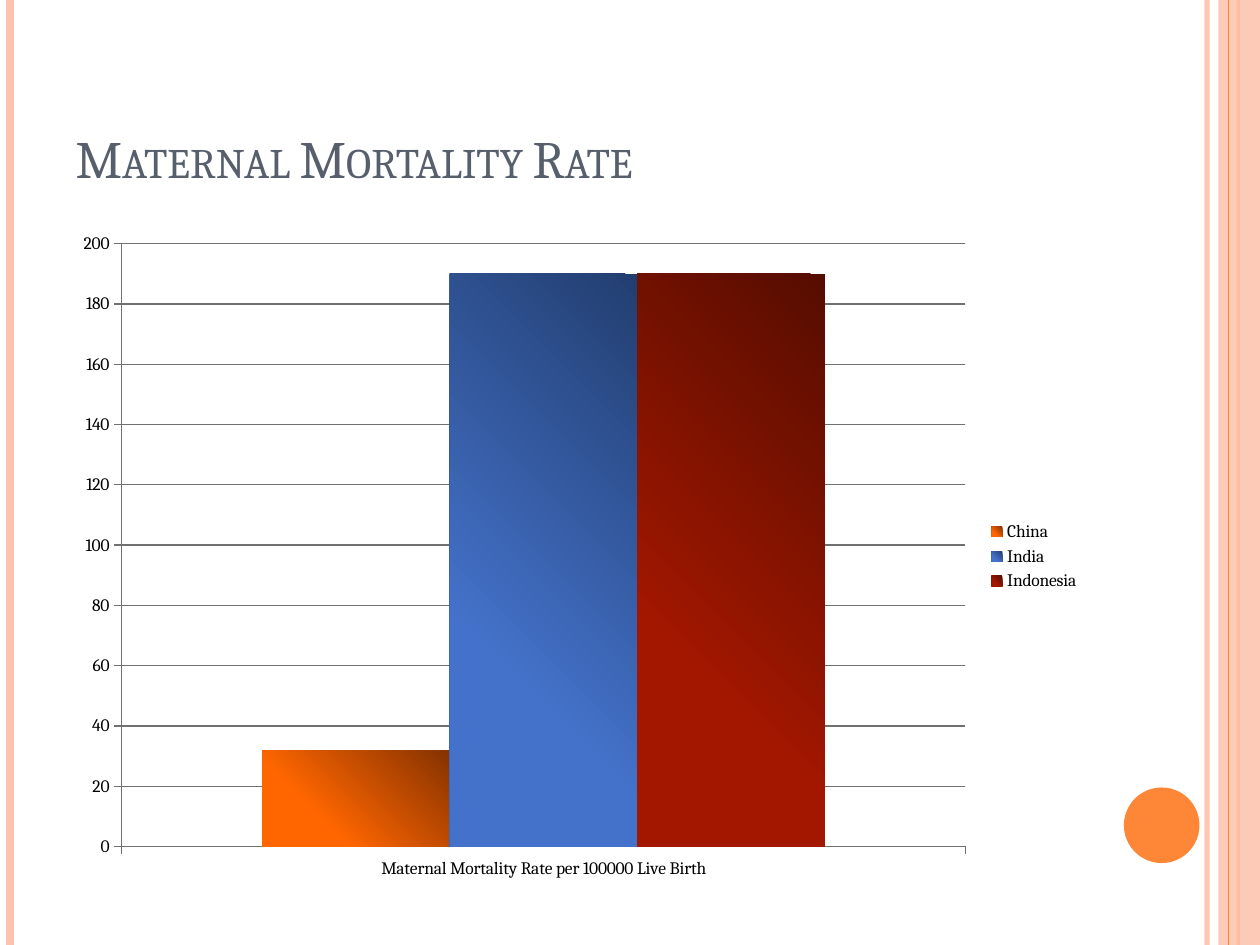
from typing import NamedTuple, Optional

from lxml import etree
from pptx import Presentation
from pptx import util as u
from pptx.chart.data import CategoryChartData
from pptx.dml.color import RGBColor
from pptx.enum import chart as ch, shapes, text
from pptx.oxml import parse_xml
from pptx.oxml.ns import nsdecls, qn

WIDTH, HEIGHT = 10, 7.5
FONT = "Cambria"
ORANGE, PEACH, SLATE, GREY, BLACK = "FE8637", "FEC3AE", "575F6D", "707070", "000000"


class Stripe(NamedTuple):
    x: float
    color: str
    weight: float
    opacity: Optional[int] = None


class Country(NamedTuple):
    name: str
    deaths: int
    core: str
    rim: str


LOWER_STRIPES = [Stripe(9.58, PEACH, 3, 93), Stripe(0.08, PEACH, 4.5), Stripe(9.83, ORANGE, 1.5)]
UPPER_STRIPE = Stripe(9.75, ORANGE, 0.75)
COUNTRIES = [
    Country("China", 32, "FF6600", "853200"),
    Country("India", 190, "4472CA", "223E70"),
    Country("Indonesia", 190, "A31700", "560D00"),
]


def rgb(color: str) -> RGBColor:
    """Turn a hex string into a colour."""
    return RGBColor.from_string(color)


def set_opacity(owner, percent: int) -> None:
    """Make the solid colour inside an element partly transparent."""
    swatch = next(owner.iter(qn("a:srgbClr")))
    etree.SubElement(swatch, qn("a:alpha")).set("val", str(percent * 1000))


def draw_stripe(slide, stripe: Stripe) -> None:
    """Draw a vertical line over the full slide height."""
    x = u.Inches(stripe.x)
    line = slide.shapes.add_connector(shapes.MSO_CONNECTOR.STRAIGHT, x, 0, x, u.Inches(HEIGHT))
    line.line.color.rgb = rgb(stripe.color)
    line.line.width = u.Pt(stripe.weight)
    properties = line._element.spPr
    if stripe.opacity:
        set_opacity(properties, stripe.opacity)
    etree.SubElement(properties, qn("a:effectLst"))


def draw_shape(slide, kind, box: tuple, color: str, opacity: Optional[int] = None) -> None:
    """Draw a filled shape without outline or shadow."""
    shape = slide.shapes.add_shape(kind, *map(u.Inches, box))
    shape.shadow.inherit = False
    shape.fill.solid()
    shape.fill.fore_color.rgb = rgb(color)
    shape.line.fill.background()
    if opacity:
        set_opacity(shape._element.spPr, opacity)


def write(frame, words: str, *, size: float, color: str, small_caps: bool = False,
          anchor=text.MSO_ANCHOR.TOP) -> None:
    """Put formatted, left-aligned text in a frame."""
    frame.word_wrap = True
    frame.vertical_anchor = anchor
    paragraph = frame.paragraphs[0]
    paragraph.alignment = text.PP_ALIGN.LEFT
    run = paragraph.add_run()
    run.text = words
    run.font.name, run.font.size = FONT, u.Pt(size)
    run.font.color.rgb = rgb(color)
    if small_caps:
        run._r.get_or_add_rPr().set("cap", "small")


def corner_glow(country: Country):
    """Build a radial gradient that shines from the lower left corner."""
    stops = [(0, country.core), (30, country.core), (100, country.rim)]
    listing = "".join(
        f'<a:gs pos="{share * 1000}"><a:srgbClr val="{color}"/></a:gs>' for share, color in stops
    )
    return parse_xml(
        f'<a:gradFill {nsdecls("a")} rotWithShape="1"><a:gsLst>{listing}</a:gsLst>'
        '<a:path path="circle"><a:fillToRect t="100000" r="100000"/></a:path></a:gradFill>'
    )


def draw_chart(slide, box: tuple) -> None:
    """Draw the clustered columns, one series for each country."""
    data = CategoryChartData()
    data.categories = ["Maternal Mortality Rate per 100000 Live Birth"]
    for country in COUNTRIES:
        data.add_series(country.name, [country.deaths])
    chart = slide.shapes.add_chart(
        ch.XL_CHART_TYPE.COLUMN_CLUSTERED, *map(u.Inches, box), data
    ).chart
    chart.has_title = False
    chart.font.name, chart.font.size = FONT, u.Pt(10)
    chart.font.color.rgb = rgb(BLACK)
    chart.has_legend = True
    chart.legend.position = ch.XL_LEGEND_POSITION.RIGHT
    chart.legend.include_in_layout = False

    rates = chart.value_axis
    rates.minimum_scale, rates.maximum_scale, rates.major_unit = 0, 200, 20
    rates.has_major_gridlines = True
    for axis in (rates, chart.category_axis):
        axis.major_tick_mark = ch.XL_TICK_MARK.OUTSIDE
    for line in (rates.major_gridlines.format.line, rates.format.line,
                 chart.category_axis.format.line):
        line.color.rgb = rgb(GREY)
        line.width = u.Pt(0.75)

    columns = chart.plots[0]
    columns.vary_by_categories = False
    columns.gap_width, columns.overlap = 150, 0
    for series, country in zip(columns.series, COUNTRIES):
        series.invert_if_negative = False
        series.format.fill.background()
        properties = series._element.spPr
        properties.replace(properties.find(qn("a:noFill")), corner_glow(country))


def main() -> None:
    """Build the slide and save it."""
    deck = Presentation()
    deck.slide_width, deck.slide_height = u.Inches(WIDTH), u.Inches(HEIGHT)
    slide = deck.slides.add_slide(deck.slide_layouts[5])

    for stripe in LOWER_STRIPES:
        draw_stripe(slide, stripe)
    draw_shape(slide, shapes.MSO_SHAPE.RECTANGLE, (9.67, 0, 0.33, HEIGHT), PEACH, 87)
    draw_stripe(slide, UPPER_STRIPE)
    draw_shape(slide, shapes.MSO_SHAPE.OVAL, (8.92, 6.25, 0.6, 0.6), ORANGE)

    left, width = 0.05 * WIDTH, 8.17
    title = slide.shapes.title
    title.left, title.top, title.width, title.height = map(u.Inches, (left, 0.3, width, 1.25))
    write(title.text_frame, "Maternal Mortality Rate", size=30, color=SLATE,
          small_caps=True, anchor=text.MSO_ANCHOR.BOTTOM)
    draw_chart(slide, (left, 1.75, width, 5.33))
    deck.save("out.pptx")


if __name__ == "__main__":
    main()
